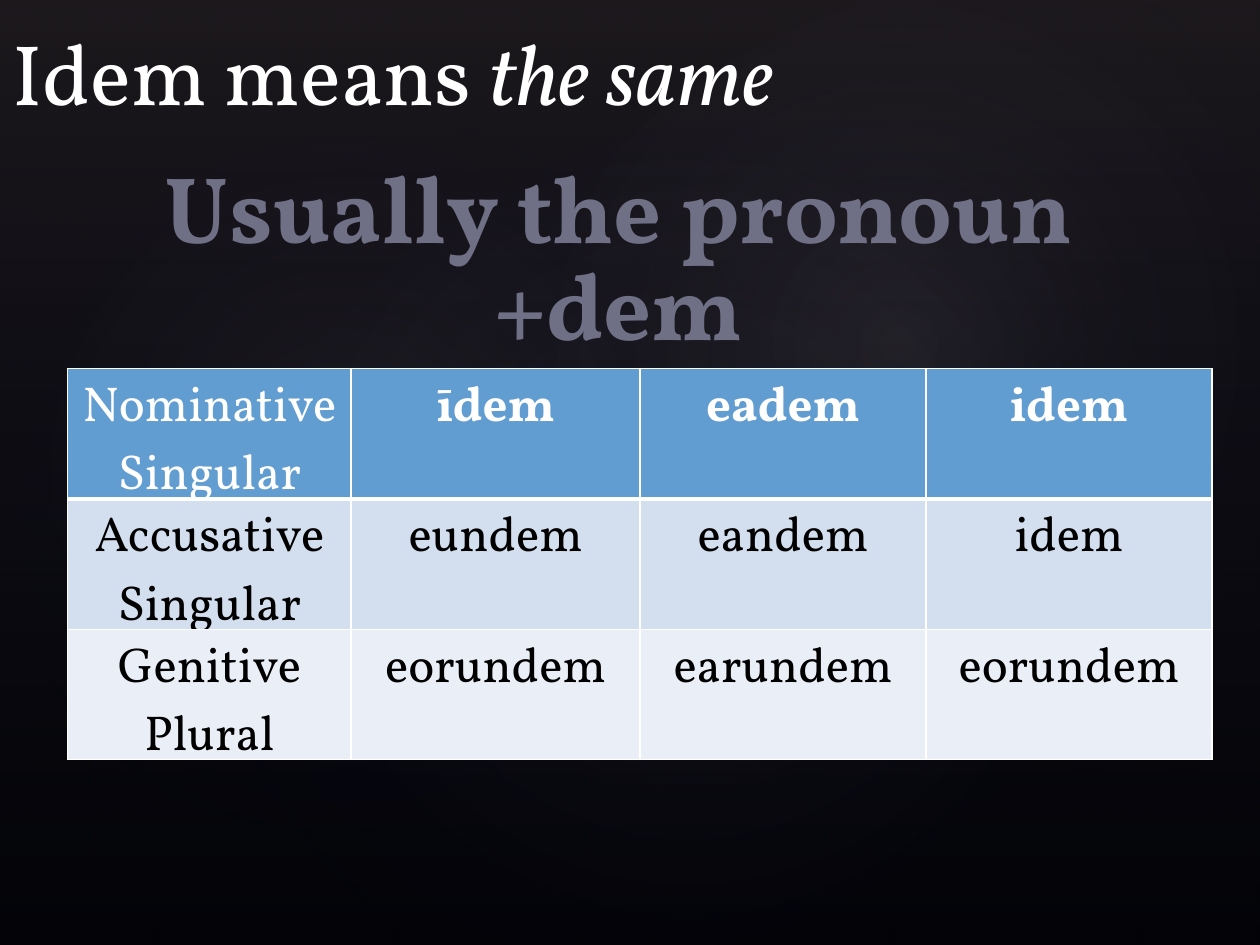
from lxml.etree import SubElement
from pptx import Presentation
from pptx.dml.color import RGBColor
from pptx.enum.shapes import MSO_SHAPE
from pptx.enum.text import PP_ALIGN
from pptx.oxml import parse_xml
from pptx.oxml.ns import nsdecls, qn
from pptx.util import Pt

BLACK = RGBColor(0x00, 0x00, 0x00)
WHITE = RGBColor(0xFF, 0xFF, 0xFF)
SLATE = RGBColor(0x6F, 0x70, 0x86)
BLUE = RGBColor(0x62, 0x9D, 0xD1)
PALE_BLUE = RGBColor(0xD3, 0xDF, 0xEE)
PALE_GREY = RGBColor(0xEA, 0xEF, 0xF7)
PLUM = RGBColor(0x50, 0x46, 0x52)
MAUVE = RGBColor(0xC4, 0xBC, 0xC6)
NAVY = RGBColor(0x24, 0x28, 0x52)

LINEAR = '<a:lin ang="5400000" scaled="0"/>'
RADIAL = '<a:path path="circle"><a:fillToRect l="50000" t="50000" r="50000" b="50000"/></a:path>'


def write(frame, text, size=28, color=WHITE, bold=False, align=PP_ALIGN.CENTER,
          italic_tail="", spacing=None):
    for index, line in enumerate(text.split("\n")):
        para = frame.add_paragraph() if index else frame.paragraphs[0]
        para.alignment = align
        if spacing:
            para.line_spacing = spacing
        for part, italic in ((line, False), (italic_tail, True)):
            if part:
                span = para.add_run()
                span.text = part
                span.font.name = "Vollkorn"
                span.font.size = Pt(size)
                span.font.bold = bold
                span.font.italic = italic
                span.font.color.rgb = color


deck = Presentation()
deck.slide_width, deck.slide_height = Pt(720), Pt(540)
page = deck.slides.add_slide(deck.slide_layouts[6])
page.background.fill.solid()
page.background.fill.fore_color.rgb = BLACK

glows = [
    (MSO_SHAPE.RECTANGLE, (0, 0, 720, 540), 0, [(0, PLUM, 36), (100, NAVY, 10)], LINEAR),
    (MSO_SHAPE.OVAL, (108, 82, 570, 449), 328.7, [(0, MAUVE, 7), (58, NAVY, 0)], RADIAL),
    (MSO_SHAPE.OVAL, (-21.6, 92, 436, 353), 294.3, [(0, MAUVE, 8), (58, NAVY, 0)], RADIAL),
    (MSO_SHAPE.OVAL, (258, 9.4, 510, 374), 328.7, [(0, MAUVE, 8), (58, NAVY, 0)], RADIAL),
]
for kind, bounds, angle, stops, direction in glows:
    glow = page.shapes.add_shape(kind, *[Pt(length) for length in bounds])
    glow.rotation = angle
    glow.shadow.inherit = False
    glow.line.fill.background()
    stop_xml = "".join(
        f'<a:gs pos="{place * 1000}"><a:srgbClr val="{color}">'
        f'<a:alpha val="{alpha * 1000}"/></a:srgbClr></a:gs>'
        for place, color, alpha in stops)
    gradient = parse_xml(
        f'<a:gradFill {nsdecls("a")} rotWithShape="1"><a:gsLst>{stop_xml}</a:gsLst>{direction}</a:gradFill>')
    glow.element.spPr.find(qn("a:prstGeom")).addnext(gradient)

title = page.shapes.add_textbox(Pt(0), Pt(0), Pt(594), Pt(72))
title.text_frame.word_wrap = True
title.text_frame.margin_top = Pt(11.4)
write(title.text_frame, "Idem means ", size=49, align=PP_ALIGN.LEFT, italic_tail="the same")

rows = [
    (BLUE, WHITE, ["Nominative\nSingular", "īdem", "eadem", "idem"]),
    (PALE_BLUE, BLACK, ["Accusative\nSingular", "eundem", "eandem", "idem"]),
    (PALE_GREY, BLACK, ["Genitive\nPlural", "eorundem", "earundem", "eorundem"]),
]
widths = [162, 165, 163.5, 163.5]
table = page.shapes.add_table(
    len(rows), len(widths), Pt(38.7), Pt(210.7), Pt(sum(widths)), Pt(68.4 * len(rows))).table
for column, width in zip(table.columns, widths):
    column.width = Pt(width)
for row_index, (fill, color, words) in enumerate(rows):
    table.rows[row_index].height = Pt(68.4)
    for column_index, word in enumerate(words):
        cell = table.cell(row_index, column_index)
        properties = cell._tc.get_or_add_tcPr()
        for side in ("lnL", "lnR", "lnT", "lnB"):
            thick = (row_index, side) in ((0, "lnB"), (1, "lnT"))
            border = SubElement(properties, qn(f"a:{side}"), w=str(Pt(3 if thick else 1)))
            paint = SubElement(border, qn("a:solidFill"))
            SubElement(paint, qn("a:srgbClr"), val=str(WHITE))
        cell.fill.solid()
        cell.fill.fore_color.rgb = fill
        write(cell.text_frame, word, color=color, bold=row_index == 0 and column_index > 0)

subtitle = page.shapes.add_textbox(Pt(13.7), Pt(78.5), Pt(679.7), Pt(72.7))
subtitle.text_frame.word_wrap = True
subtitle.text_frame.margin_top = Pt(16)
subtitle.text_frame.margin_left = subtitle.text_frame.margin_right = Pt(10)
write(subtitle.text_frame, "Usually the pronoun +dem", size=54, color=SLATE, bold=True, spacing=0.86)

deck.save("out.pptx")
